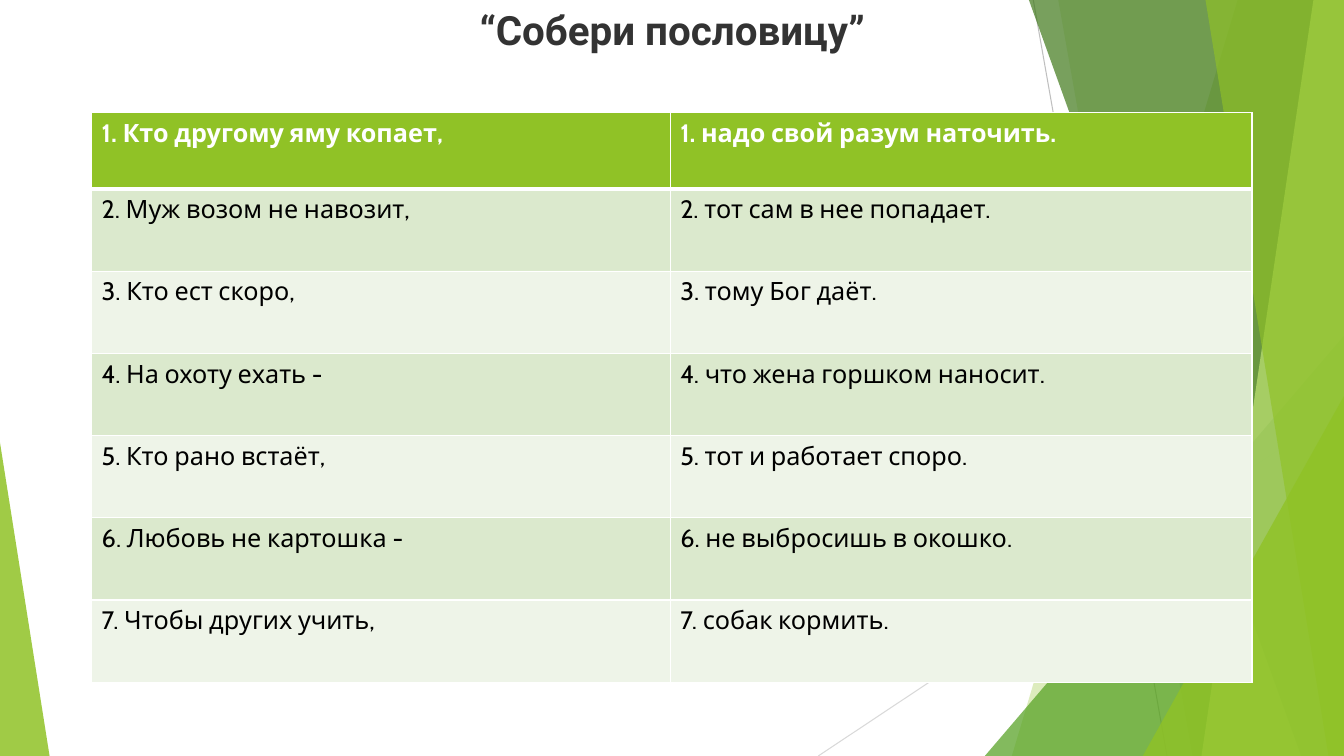
from pptx import Presentation
from pptx.dml.color import RGBColor as Rgb
from pptx.enum.shapes import MSO_CONNECTOR as Link, MSO_SHAPE as Form
from pptx.enum.text import MSO_ANCHOR as Anchor, PP_ALIGN as Align
from pptx.oxml import parse_xml
from pptx.oxml.ns import nsdecls, qn
from pptx.oxml.xmlchemy import OxmlElement as Node
from pptx.util import Cm, Pt

WIDE, HIGH = 33.87, 19.05

HUES = {
    "lime": "90C226", "leaf": "54A021", "pine": "3F7819", "pale": "C0E474",
    "gray": "BFBFBF", "mist": "D9D9D9", "ink": "333333", "black": "000000",
    "white": "FFFFFF", "odd": "DBE9CD", "even": "EEF4E8",
}

SAYINGS = [
    ("1. Кто другому яму копает,", "1. надо свой разум наточить."),
    ("2. Муж возом не навозит,", "2. тот сам в нее попадает."),
    ("3. Кто ест скоро,", "3. тому Бог даёт."),
    ("4. На охоту ехать -", "4. что жена горшком наносит."),
    ("5. Кто рано встаёт,", "5. тот и работает споро."),
    ("6. Любовь не картошка -", "6. не выбросишь в окошко."),
    ("7. Чтобы других учить,", "7. собак кормить."),
]


class Deck:
    def __init__(self):
        self.show = Presentation()
        self.show.slide_width, self.show.slide_height = Cm(WIDE), Cm(HIGH)
        self.slide = self.show.slides.add_slide(self.show.slide_layouts[6])
        self.shapes = self.slide.shapes
        self.head, self.body = "Roboto", "Cabin"

    def color(self, name):
        return Rgb.from_string(HUES[name])

    def paint(self, shape, hue, alpha):
        shape.shadow.inherit = False
        shape.line.fill.background()
        shape.fill.solid()
        shape.fill.fore_color.rgb = self.color(hue)
        tone = shape.fill._xPr.find(qn("a:solidFill"))[0]
        veil = Node("a:alpha")
        veil.set("val", str(alpha * 1000))
        tone.append(veil)

    def line(self, x1, y1, x2, y2, hue):
        link = self.shapes.add_connector(
            Link.STRAIGHT, Cm(x1), Cm(y1), Cm(x2), Cm(y2))
        link.line.color.rgb = self.color(hue)
        link.line.width = Pt(0.75)
        link._element.spPr.append(Node("a:effectLst"))

    def panel(self, top, base, hue, alpha):
        path = self.shapes.build_freeform(Cm(top), 0)
        path.add_line_segments(
            [(Cm(WIDE), 0), (Cm(WIDE), Cm(HIGH)), (Cm(base), Cm(HIGH))])
        self.paint(path.convert_to_shape(), hue, alpha)

    def wedge(self, left, top, width, tip, hue, alpha):
        shape = self.shapes.add_shape(
            Form.ISOSCELES_TRIANGLE, Cm(left), Cm(top), Cm(width), Cm(HIGH - top))
        shape.adjustments[0] = tip
        self.paint(shape, hue, alpha)

    def style(self, para, font, size, hue, bold):
        for run in para.runs:
            run.font.name, run.font.size, run.font.bold = font, Pt(size), bold
            run.font.color.rgb = self.color(hue)

    def title(self, text, left, top, width, height):
        frame = self.shapes.add_textbox(
            Cm(left), Cm(top), Cm(width), Cm(height)).text_frame
        frame.word_wrap = True
        frame.vertical_anchor = Anchor.TOP
        frame.text = text
        para = frame.paragraphs[0]
        para.alignment = Align.CENTER
        self.style(para, self.head, 28.8, "ink", True)

    def edges(self, cell, row):
        sides = {"L": 1, "R": 1, "T": 3 if row == 1 else 1, "B": 1 if row else 3}
        for side, size in sides.items():
            cell._tc.get_or_add_tcPr().append(parse_xml(
                f'<a:ln{side} {nsdecls("a")} w="{Pt(size)}"><a:solidFill>'
                f'<a:srgbClr val="{HUES["white"]}"/></a:solidFill></a:ln{side}>'))

    def table(self, rows, left, top, cols, first, rest):
        highs = [first] + [rest] * (len(rows) - 1)
        grid = self.shapes.add_table(
            len(rows), len(cols), Cm(left), Cm(top),
            Cm(sum(cols)), Cm(sum(highs))).table
        for col, width in zip(grid.columns, cols):
            col.width = Cm(width)
        for r, (texts, high) in enumerate(zip(rows, highs)):
            grid.rows[r].height = Cm(high)
            fill = ("odd" if r % 2 else "even") if r else "lime"
            for c, text in enumerate(texts):
                cell = grid.cell(r, c)
                self.edges(cell, r)
                cell.fill.solid()
                cell.fill.fore_color.rgb = self.color(fill)
                cell.text_frame.text = text
                self.style(cell.text_frame.paragraphs[0], self.body, 18,
                           "black" if r else "white", r == 0)


def main():
    deck = Deck()
    deck.line(26.04, 0, 29.41, HIGH, "gray")
    deck.line(WIDE, 10.24, 20.62, HIGH, "mist")
    deck.panel(31.19, 25.5, "lime", 30)
    deck.panel(26.67, 30.05, "lime", 20)
    deck.wedge(24.82, 8.46, 9.05, 1, "leaf", 72)
    deck.panel(25.93, 32.79, "pine", 70)
    deck.panel(33.1, 30.28, "pale", 70)
    deck.panel(30.38, 33.48, "lime", 65)
    deck.wedge(28.8, 9.98, 5.07, 1, "lime", 80)
    deck.wedge(0, 11.15, 1.25, 0, "lime", 85)
    deck.title("“Собери пословицу”", 2.34, 0, 29.21, 2.74)
    deck.table(SAYINGS, 2.31, 2.84, [14.58, 14.66], 1.93, 2.07)
    deck.show.save("out.pptx")


if __name__ == "__main__":
    main()
